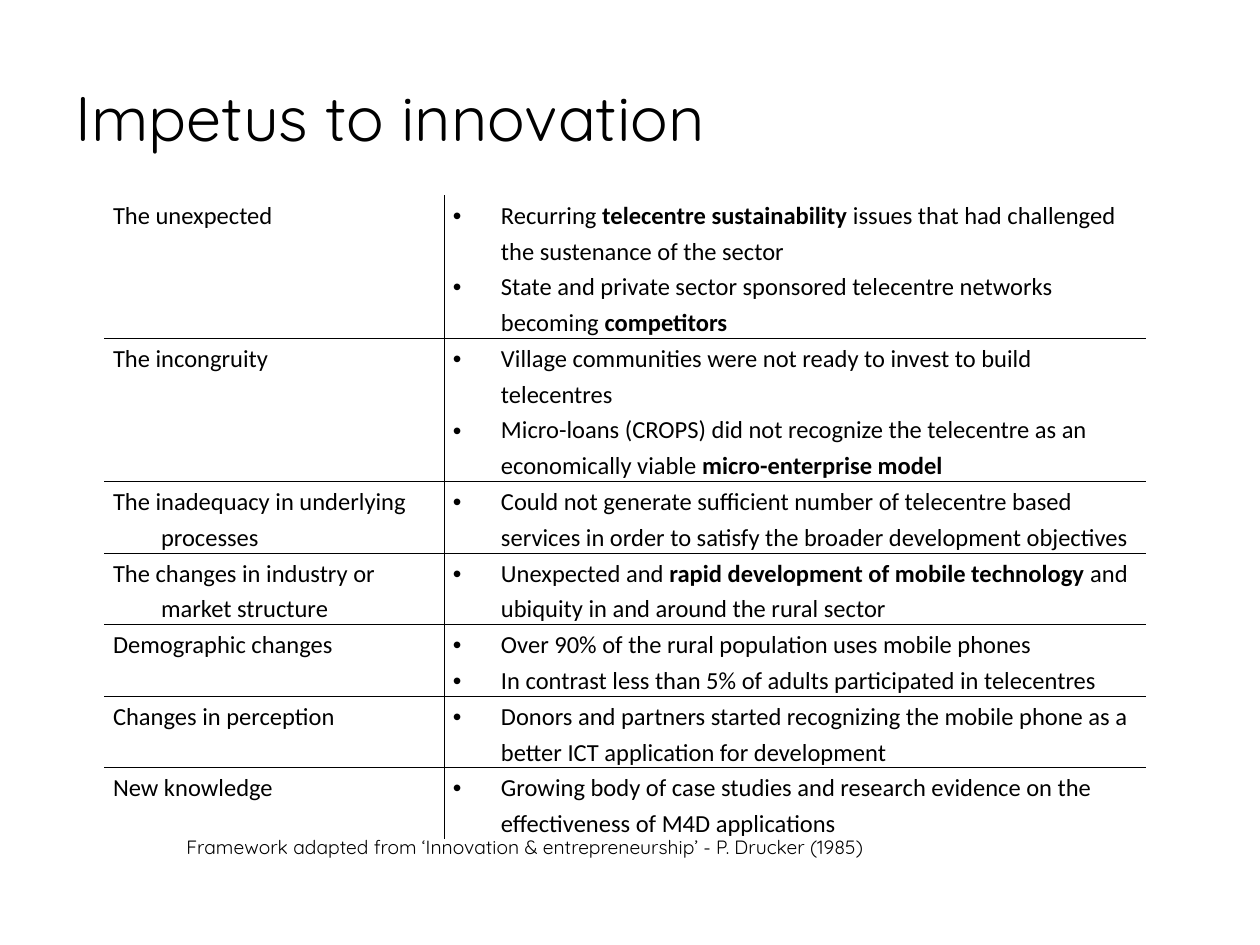
from dataclasses import dataclass

from lxml.etree import SubElement
from pptx import Presentation
from pptx.dml.color import RGBColor
from pptx.enum.text import MSO_ANCHOR, PP_ALIGN
from pptx.oxml.ns import qn
from pptx.util import Emu, Pt


@dataclass(frozen=True)
class Theme:
    ink: str = "000000"
    heading: str = "Quicksand"
    body: str = "Calibri"
    title_size: int = 36
    body_size: int = 14
    note_size: int = 11
    rule_width: float = 0.25


THEME = Theme()
EMU_PER_PX = 914400 / 126
INSET, INDENT = 9, 48
COLUMNS = (340, 702)

# Row height, impetus, evidence; ** marks bold text.
ROWS = [
    (141, "The unexpected", [
        "Recurring **telecentre sustainability **issues that had challenged the sustenance of the sector",
        "State and private sector sponsored telecentre networks becoming **competitors**"]),
    (141, "The incongruity", [
        "Village communities were not ready to invest to build telecentres",
        "Micro-loans (CROPS) did not recognize the telecentre as an economically viable "
        "**micro-enterprise model**"]),
    (70, "The inadequacy in underlying processes", [
        "Could not generate sufficient number of telecentre based services in order to satisfy "
        "the broader development objectives"]),
    (70, "The changes in industry or market structure", [
        "Unexpected and **rapid development of mobile technology **and ubiquity in and around "
        "the rural sector"]),
    (70, "Demographic changes", [
        "Over 90% of the rural population uses mobile phones",
        "In contrast less than 5% of adults participated in telecentres"]),
    (70, "Changes in perception", [
        "Donors and partners started recognizing the mobile phone as a better ICT application "
        "for development"]),
    (70, "New knowledge", [
        "Growing body of case studies and research evidence on the effectiveness of M4D applications"]),
]


def px(n):
    return Emu(round(n * EMU_PER_PX))


def style(font, name, size, bold=False):
    font.name, font.size, font.bold = name, Pt(size), bold
    font.color.rgb = RGBColor.from_string(THEME.ink)


def add_title(s, text):
    sp = s.shapes.title
    sp.left, sp.top, sp.width, sp.height = px(63), px(38), px(1134), px(157)
    tf = sp.text_frame
    tf.text = text
    tf.vertical_anchor = MSO_ANCHOR.MIDDLE
    p = tf.paragraphs[0]
    p.alignment = PP_ALIGN.LEFT
    style(p.runs[0].font, THEME.heading, THEME.title_size)


def add_note(s, text):
    tf = s.shapes.add_textbox(px(174), px(829), px(747), px(37)).text_frame
    tf.word_wrap = False
    tf.text = text
    style(tf.paragraphs[0].runs[0].font, THEME.heading, THEME.note_size)


def fill_paragraph(p, text, bullet):
    p.line_spacing = 1.2
    pPr = p._p.get_or_add_pPr()
    pPr.set("marL", str(px(INDENT)))
    pPr.set("indent", str(-px(INDENT)))
    if bullet:
        SubElement(pPr, qn("a:buFont"), typeface="Arial")
        SubElement(pPr, qn("a:buChar"), char="•")
    else:
        SubElement(pPr, qn("a:buNone"))
    for i, part in enumerate(text.split("**")):
        if part:
            r = p.add_run()
            r.text = part
            style(r.font, THEME.body, THEME.body_size, bold=i % 2 == 1)


def set_borders(cell, sides):
    """Rule the named sides (L, R, T, B) and clear the others."""
    tcPr = cell._tc.get_or_add_tcPr()
    for side in "LRTB":
        ln = SubElement(tcPr, qn(f"a:ln{side}"), w=str(Pt(THEME.rule_width)))
        if side in sides:
            fill = SubElement(ln, qn("a:solidFill"))
            SubElement(fill, qn("a:srgbClr"), val=THEME.ink)
        else:
            SubElement(ln, qn("a:noFill"))


def fill_cell(cell, texts, bullet, borders):
    cell.margin_left = cell.margin_right = px(INSET)
    cell.margin_top = cell.margin_bottom = 0
    tf = cell.text_frame
    for i, text in enumerate(texts):
        fill_paragraph(tf.add_paragraph() if i else tf.paragraphs[0], text, bullet)
    set_borders(cell, borders)
    cell.fill.background()


def add_framework_table(s):
    total = sum(row[0] for row in ROWS)
    table = s.shapes.add_table(len(ROWS), len(COLUMNS), px(104), px(195),
                               px(sum(COLUMNS)), px(total)).table
    table.first_row = table.horz_banding = False
    for column, width in zip(table.columns, COLUMNS):
        column.width = px(width)
    for i, (height, impetus, evidence) in enumerate(ROWS):
        table.rows[i].height = px(height)
        inner = ("T" if i else "") + ("B" if i < len(ROWS) - 1 else "")
        fill_cell(table.cell(i, 0), [impetus], False, "R" + inner)
        fill_cell(table.cell(i, 1), evidence, True, "L" + inner)


def main():
    prs = Presentation()
    prs.slide_width, prs.slide_height = px(1260), px(945)
    s = prs.slides.add_slide(prs.slide_layouts[5])
    add_title(s, "Impetus to innovation")
    add_framework_table(s)
    add_note(s, "Framework adapted from ‘Innovation & entrepreneurship’ - P. Drucker (1985)")
    prs.save("out.pptx")


if __name__ == "__main__":
    main()
